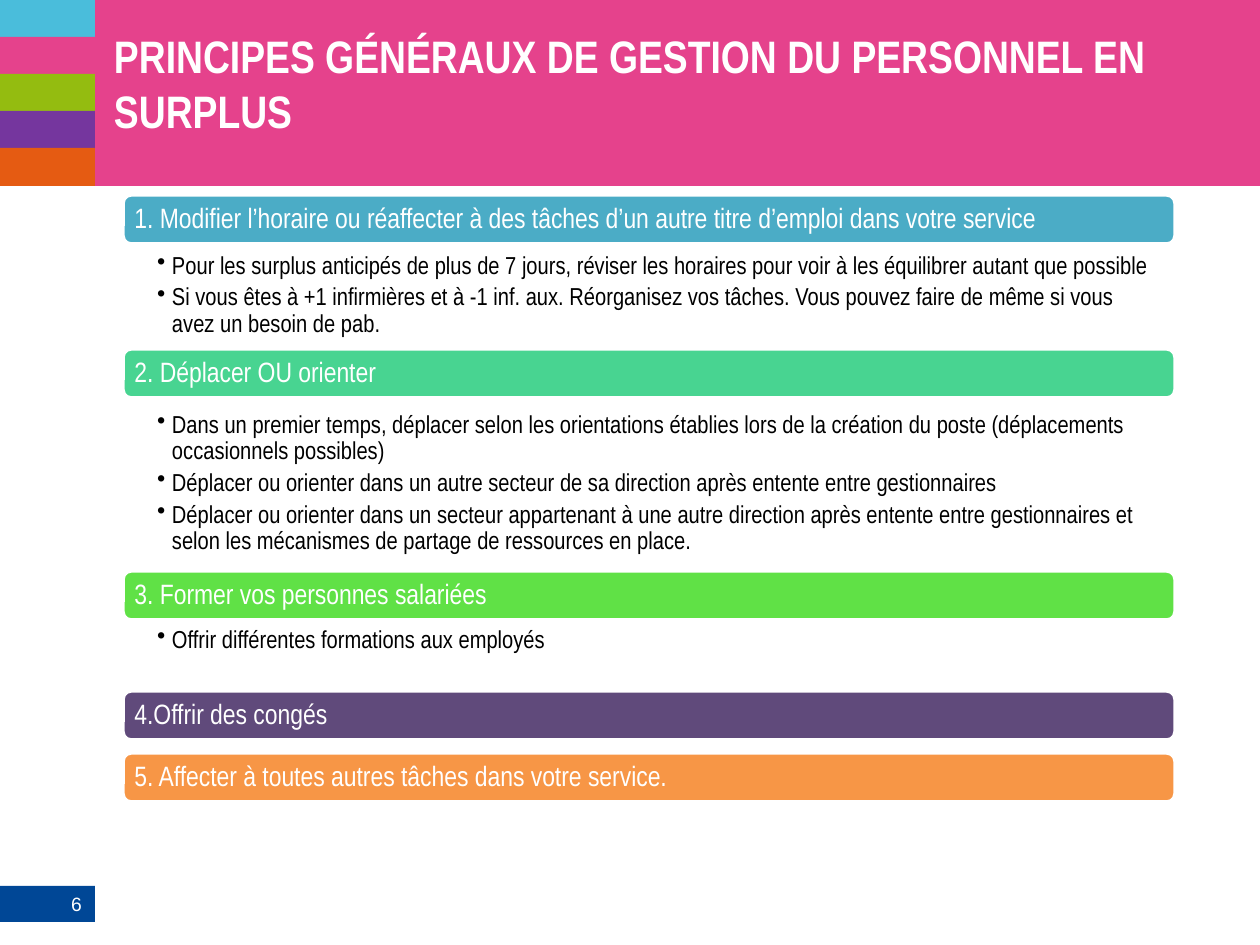
from lxml import etree
from pptx import Presentation
from pptx.dml.color import RGBColor
from pptx.enum.shapes import MSO_SHAPE
from pptx.enum.text import MSO_ANCHOR, MSO_AUTO_SIZE, PP_ALIGN
from pptx.oxml.ns import qn
from pptx.util import Emu, Pt

RECTANGLE = MSO_SHAPE.RECTANGLE
ROUNDED = MSO_SHAPE.ROUNDED_RECTANGLE
TOP, MIDDLE = MSO_ANCHOR.TOP, MSO_ANCHOR.MIDDLE
LEFT, RIGHT = PP_ALIGN.LEFT, PP_ALIGN.RIGHT

WHITE = RGBColor(0xFF, 0xFF, 0xFF)
BLACK = RGBColor(0x00, 0x00, 0x00)
PINK = RGBColor(0xE5, 0x42, 0x8C)
NAVY = RGBColor(0x00, 0x47, 0x96)
SKY = RGBColor(0x4A, 0xBD, 0xDB)
OLIVE = RGBColor(0x94, 0xBC, 0x10)
VIOLET = RGBColor(0x75, 0x36, 0x9E)
RUST = RGBColor(0xE5, 0x5B, 0x12)
TEAL = RGBColor(0x4B, 0xAC, 0xC6)
MINT = RGBColor(0x48, 0xD4, 0x91)
GREEN = RGBColor(0x60, 0xE1, 0x46)
PLUM = RGBColor(0x60, 0x4A, 0x7B)
ORANGE = RGBColor(0xF7, 0x96, 0x46)

PX = 914400 / 126
SIDE_WIDTH, BANNER_HEIGHT = 95, 186
BAR_LEFT, BAR_WIDTH, BAR_HEIGHT = 123, 1052, 49
BULLET_INDENT = 15


def px(*lengths):
    return [Emu(round(length * PX)) for length in lengths]


def write(shape, texts, size, color=WHITE, font="Arial Narrow", bold=False, align=LEFT,
          anchor=TOP, insets=(0, 0, 0, 0), spacing=None, after=0, bullet=False):
    """Fill the shape with one paragraph per text; insets are left, top, right, bottom."""
    frame = shape.text_frame
    frame.word_wrap = True
    frame.auto_size = MSO_AUTO_SIZE.NONE
    frame.vertical_anchor = anchor
    (frame.margin_left, frame.margin_top,
     frame.margin_right, frame.margin_bottom) = px(*insets)
    for index, text in enumerate(texts):
        paragraph = frame.paragraphs[0] if index == 0 else frame.add_paragraph()
        paragraph.text = text
        paragraph.alignment = align
        paragraph.line_spacing = spacing
        paragraph.space_after = Pt(after)
        if bullet:
            properties = paragraph._p.get_or_add_pPr()
            indent, = px(BULLET_INDENT)
            properties.set("marL", str(indent))
            properties.set("indent", str(-indent))
            etree.SubElement(properties, qn("a:buChar")).set("char", "•")
        paragraph.font.name = font
        paragraph.font.size = Pt(size)
        paragraph.font.bold = bold
        paragraph.font.color.rgb = color


presentation = Presentation()
presentation.slide_width, presentation.slide_height = px(1260, 945)
slide = presentation.slides.add_slide(presentation.slide_layouts[5])

# Banner, page number and colour strips
blocks = [(SIDE_WIDTH, 0, 1260 - SIDE_WIDTH, BANNER_HEIGHT, PINK),
          (0, 886, SIDE_WIDTH, 36, NAVY)]
strips = [SKY, PINK, OLIVE, VIOLET, RUST]
for index, color in enumerate(strips):
    top = index * BANNER_HEIGHT // len(strips)
    bottom = (index + 1) * BANNER_HEIGHT // len(strips)
    blocks.append((0, top, SIDE_WIDTH, bottom - top, color))
for left, top, width, height, color in blocks:
    block = slide.shapes.add_shape(RECTANGLE, *px(left, top, width, height))
    block.shadow.inherit = False
    block.fill.solid()
    block.fill.fore_color.rgb = color
    block.line.fill.background()
    if color == NAVY:
        write(block, ["6"], 11, font="Arial", align=RIGHT, anchor=MIDDLE,
              insets=(13, 6, 13, 6))

# Title, brought in front of the banner
title = slide.shapes.title
title.left, title.top, title.width, title.height = px(114, 28, 1111, 137)
write(title, ["PRINCIPES GÉNÉRAUX DE GESTION DU PERSONNEL EN SURPLUS"], 26, bold=True)
title.element.getparent().append(title.element)

# Steps: bar top, colour, heading, list top, list height, list items
steps = [
    (195, TEAL,
     "1. Modifier l’horaire ou réaffecter à des tâches d’un autre titre d’emploi "
     "dans votre service",
     251, 78,
     ["Pour les surplus anticipés de plus de 7 jours, réviser les horaires pour voir "
      "à les équilibrer autant que possible",
      "Si vous êtes à +1 infirmières et à -1 inf. aux. Réorganisez vos tâches. Vous "
      "pouvez faire de même si vous avez un besoin de pab."]),
    (349, MINT, "2. Déplacer OU orienter",
     410, 198,
     ["Dans un premier temps, déplacer selon les orientations établies lors de la "
      "création du poste (déplacements occasionnels possibles)",
      "Déplacer ou orienter dans un autre secteur de sa direction après entente entre "
      "gestionnaires",
      "Déplacer ou orienter dans un secteur appartenant à une autre direction après "
      "entente entre gestionnaires et selon les mécanismes de partage de ressources "
      "en place."]),
    (571, GREEN, "3. Former vos personnes salariées",
     625, 48, ["Offrir différentes formations aux employés"]),
    (691, PLUM, "4.Offrir des congés", 0, 0, []),
    (753, ORANGE, "5. Affecter à toutes autres tâches dans votre service.", 0, 0, []),
]
for bar_top, color, heading, list_top, list_height, items in steps:
    bar = slide.shapes.add_shape(ROUNDED, *px(BAR_LEFT, bar_top, BAR_WIDTH, BAR_HEIGHT))
    bar.shadow.inherit = False
    bar.fill.solid()
    bar.fill.fore_color.rgb = color
    bar.line.color.rgb = WHITE
    bar.line.width = Pt(2)
    write(bar, [heading], 16, anchor=MIDDLE, insets=(9, 9, 9, 9), spacing=0.9)
    if items:
        box = slide.shapes.add_textbox(*px(BAR_LEFT, list_top, BAR_WIDTH, list_height))
        write(box, items, 14, color=BLACK, insets=(34, 2, 14, 2), spacing=0.9,
              after=3, bullet=True)

presentation.save("out.pptx")
